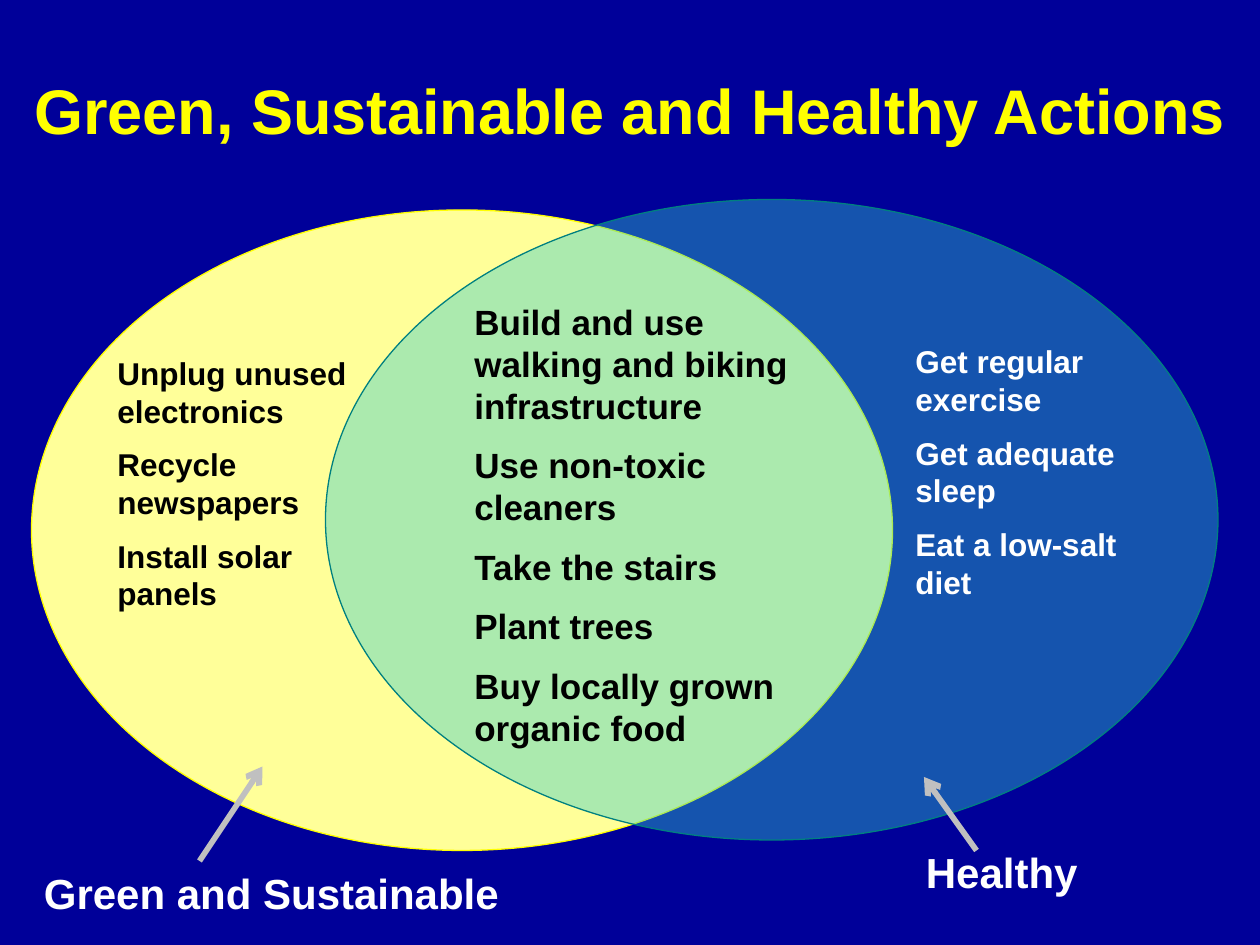
from lxml import etree
from pptx import Presentation
from pptx import util as u
from pptx.dml.color import RGBColor
from pptx.enum import shapes, text
from pptx.oxml.ns import qn

COLORS = {
    "background": "000099",
    "title": "FFFF00",
    "green": "FFFF99",
    "green_edge": "FFFF00",
    "healthy": "33CCCC",
    "healthy_edge": "008080",
    "dark": "000000",
    "light": "FFFFFF",
    "arrow": "C0C0C0",
}
FONT = "Arial"
COLUMNS, ROWS = 120, 90
WIDTH, HEIGHT = u.Inches(10), u.Inches(7.5)


def rgb(name):
    return RGBColor.from_string(COLORS[name])


def grid(column, row):
    return round(WIDTH * column / COLUMNS), round(HEIGHT * row / ROWS)


def add_text(slide, box, lines, size, color, align=text.PP_ALIGN.LEFT, wrap=True, skip=0):
    left, top, width, height = box
    words = slide.shapes.add_textbox(*grid(left, top), *grid(width, height))
    frame = words.text_frame
    frame.word_wrap = wrap
    frame.margin_top = u.Inches(0.05) + u.Pt(size * 1.7 * skip)
    for index, line in enumerate(lines):
        paragraph = frame.add_paragraph() if index else frame.paragraphs[0]
        paragraph.alignment = align
        paragraph.space_before = u.Pt(size / 2 if index else 0)
        paragraph.line_spacing = u.Pt(size * 1.2)
        run = paragraph.add_run()
        run.text = line
        run.font.name = FONT
        run.font.size = u.Pt(size)
        run.font.bold = True
        run.font.color.rgb = rgb(color)


def add_circle(slide, box, fill, edge, opacity=100):
    left, top, width, height = box
    circle = slide.shapes.add_shape(
        shapes.MSO_SHAPE.OVAL, *grid(left, top), *grid(width, height))
    circle.shadow.inherit = False
    circle.fill.solid()
    circle.fill.fore_color.rgb = rgb(fill)
    circle.line.color.rgb = rgb(edge)
    circle.line.width = u.Pt(0.75)
    if opacity < 100:
        tint = circle.fill._xPr.find(qn("a:solidFill"))[0]
        etree.SubElement(tint, qn("a:alpha"), val=str(opacity * 1000))


def add_arrow(slide, start, end):
    arrow = slide.shapes.add_connector(
        shapes.MSO_CONNECTOR.STRAIGHT, *grid(*start), *grid(*end))
    arrow.line.color.rgb = rgb("arrow")
    arrow.line.width = u.Pt(3.25)
    etree.SubElement(arrow.line._get_or_add_ln(), qn("a:tailEnd"), type="arrow")
    etree.SubElement(arrow._element.spPr, qn("a:effectLst"))


def add_venn(slide, box):
    left, top, width, height = box
    add_circle(slide, (left, top + 1, width - 31, height - 1), "green", "green_edge")
    add_circle(slide, (left + 28, top, width - 28, height - 1),
               "healthy", "healthy_edge", opacity=41)
    add_text(slide, (left + 7, top + 9, 29, 42.7),
             ["Unplug unused electronics", "Recycle newspapers", "Install solar panels"],
             18, "dark", skip=1)
    add_text(slide, (left + 41, top + 9, 35, 51.7),
             ["Build and use walking and biking infrastructure", "Use non-toxic cleaners",
              "Take the stairs", "Plant trees", "Buy locally grown organic food"],
             20, "dark")
    add_text(slide, (left + 83, top + 13, 26, 31.9),
             ["Get regular exercise", "Get adequate sleep", "Eat a low-salt diet"],
             18, "light")


def add_callout(slide, box, label, start, reach, wrap=True):
    left, top = box[:2]
    tail = left + start[0], top + start[1]
    add_text(slide, box, [label], 24, "light", wrap=wrap)
    add_arrow(slide, tail, (tail[0] + reach[0], tail[1] + reach[1]))


def main():
    deck = Presentation()
    deck.slide_width, deck.slide_height = WIDTH, HEIGHT
    slide = deck.slides.add_slide(deck.slide_layouts[6])
    slide.background.fill.solid()
    slide.background.fill.fore_color.rgb = rgb("background")
    add_venn(slide, (3, 19, 113, 62))
    add_text(slide, (0, 6.25, COLUMNS, 8.4), ["Green, Sustainable and Healthy Actions"],
             36, "title", align=text.PP_ALIGN.CENTER)
    add_callout(slide, (87, 80, 20, 6), "Healthy", (6, 1), (-5, -7))
    add_callout(slide, (3, 82, 46.5, 6), "Green and Sustainable", (16, 0), (6, -9), wrap=False)
    deck.save("out.pptx")


if __name__ == "__main__":
    main()
